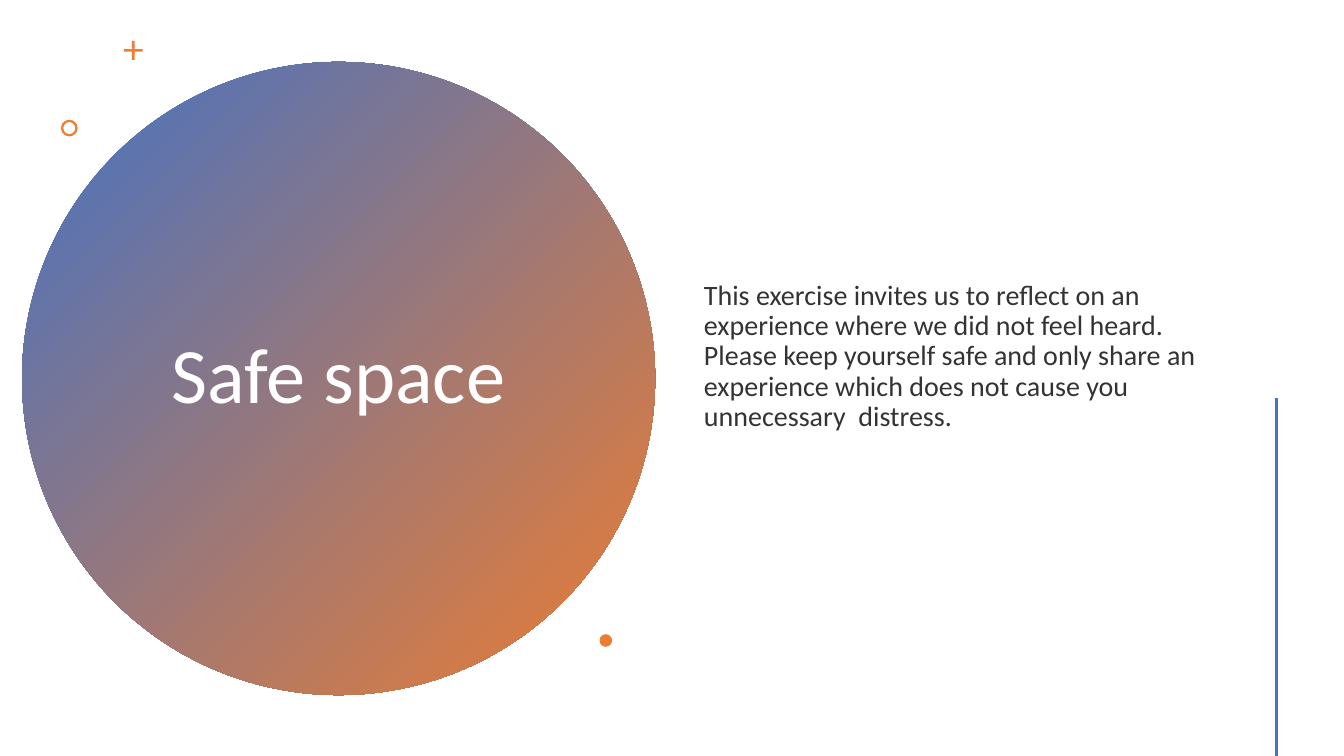
import pptx
import pptx.util
import pptx.dml.color
import pptx.enum.shapes
import pptx.enum.text
import lxml.etree
from dataclasses import dataclass

SCALE = 9525  # EMU in one px, 96 px to the inch
KIND = pptx.enum.shapes.MSO_SHAPE
ALIGN = pptx.enum.text.PP_ALIGN


@dataclass(frozen=True)
class Theme:
    blue: str = "4472C4"
    orange: str = "ED7D31"
    white: str = "FFFFFF"
    ink: str = "333333"
    font: str = "Calibri"
    title: int = 56
    body: int = 20
    rule: int = 2


THEME = Theme()


def px(count):
    return pptx.util.Emu(count * SCALE)


def rgb(code):
    return pptx.dml.color.RGBColor.from_string(code)


def add_form(slide, kind, box, color=None, adjust=None):
    form = slide.shapes.add_shape(kind, *map(px, box))
    form.shadow.inherit = False
    form.line.fill.background()
    if color:
        form.fill.solid()
        form.fill.fore_color.rgb = rgb(color)
    if adjust is not None:
        form.adjustments[0] = adjust
    return form


def add_text(slide, box, words, size, color, align):
    frame = slide.shapes.add_textbox(*map(px, box)).text_frame
    frame.word_wrap = True
    frame.vertical_anchor = pptx.enum.text.MSO_ANCHOR.MIDDLE
    para = frame.paragraphs[0]
    para.text = words
    para.alignment = align
    para.line_spacing = 0.9
    para.font.name = THEME.font
    para.font.size = pptx.util.Pt(size)
    para.font.color.rgb = rgb(color)
    return frame


def add_badge(slide, box):
    """Gradient circle with the title and its small ornaments."""
    left, top, width, height = box

    # Circle
    disc = add_form(slide, KIND.OVAL, box)
    disc.fill.gradient()
    disc.fill.gradient_angle = 315
    for stop, color in zip(disc.fill.gradient_stops, (THEME.blue, THEME.orange)):
        stop.color.rgb = rgb(color)

    # Title
    inset = 110
    add_text(slide, (left + inset, top + 76, width - 2 * inset, height - 2 * 76),
             "Safe space", THEME.title, THEME.white, ALIGN.CENTER)

    # Plus, ring and dot
    for kind, x, y, size, adjust in (
        (KIND.CROSS, 97, -20, 18, 0.43),
        (KIND.DONUT, 37, 55, 16, 0.14),
        (KIND.OVAL, 550, 545, 12, None),
    ):
        add_form(slide, kind, (left + x, top + y, size, size), THEME.orange, adjust)


def add_body(slide, box):
    """Message, set slightly above the middle of its box."""
    frame = add_text(
        slide, box,
        "This exercise invites us to reflect on an experience where we did not "
        "feel heard. Please keep yourself safe and only share an experience "
        "which does not cause you unnecessary  distress.",
        THEME.body, THEME.ink, ALIGN.LEFT)
    frame.margin_bottom = px(47)
    frame.paragraphs[0].space_before = pptx.util.Pt(10)


def add_rule(slide, box):
    """Vertical line along the left side of the box."""
    left, top, _, height = box
    rule = slide.shapes.add_connector(
        pptx.enum.shapes.MSO_CONNECTOR.STRAIGHT,
        px(left), px(top), px(left), px(top + height))
    rule.line.color.rgb = rgb(THEME.blue)
    rule.line.width = pptx.util.Pt(THEME.rule)
    space = "http://schemas.openxmlformats.org/drawingml/2006/main"
    lxml.etree.SubElement(rule._element.spPr, "{%s}effectLst" % space)


def main():
    deck = pptx.Presentation()
    deck.slide_width, deck.slide_height = px(1280), px(720)
    slide = deck.slides.add_slide(deck.slide_layouts[6])
    add_badge(slide, (21, 59, 603, 603))
    add_body(slide, (661, 55, 501, 612))
    add_rule(slide, (1216, 379, 0, 341))
    deck.save("out.pptx")


if __name__ == "__main__":
    main()
